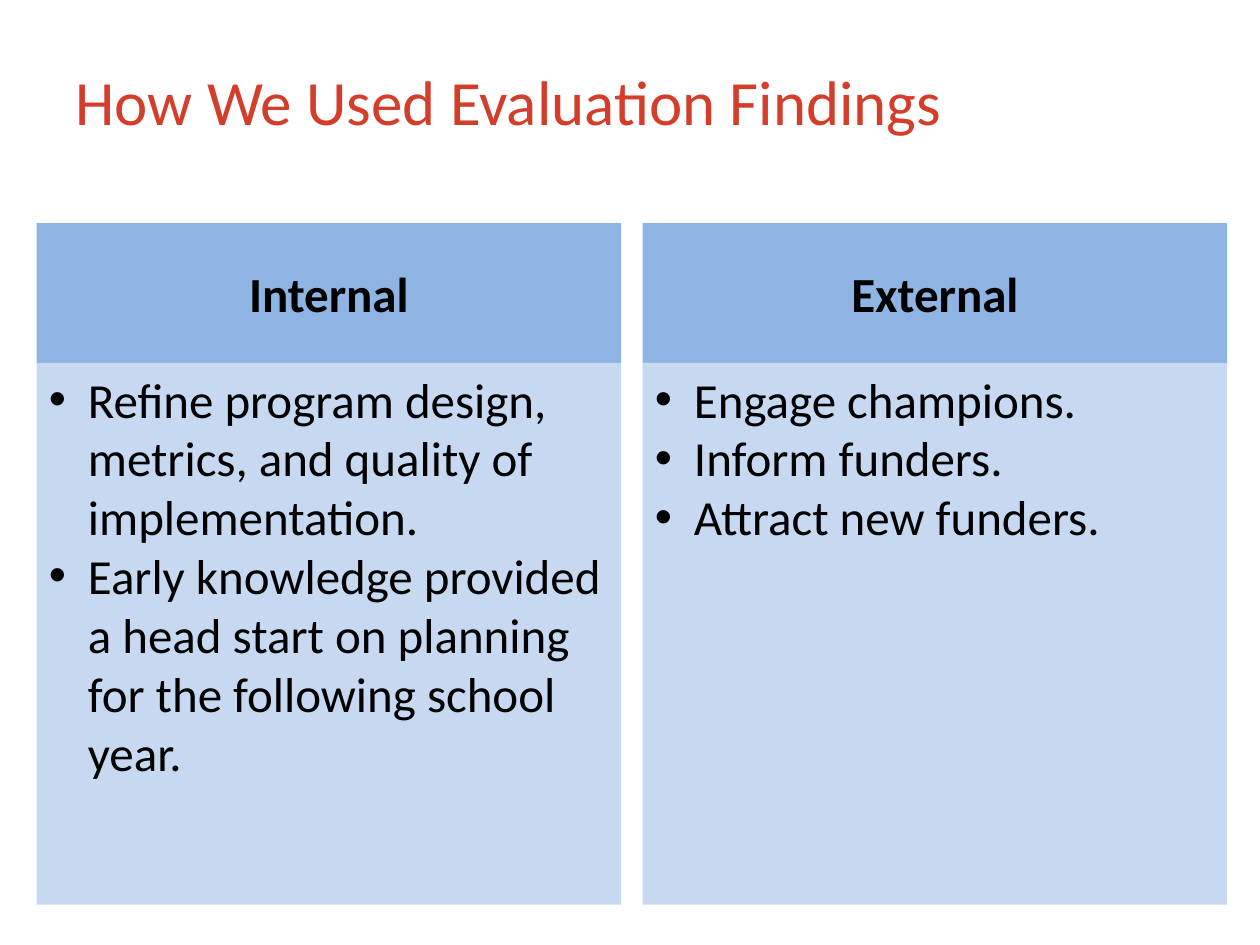
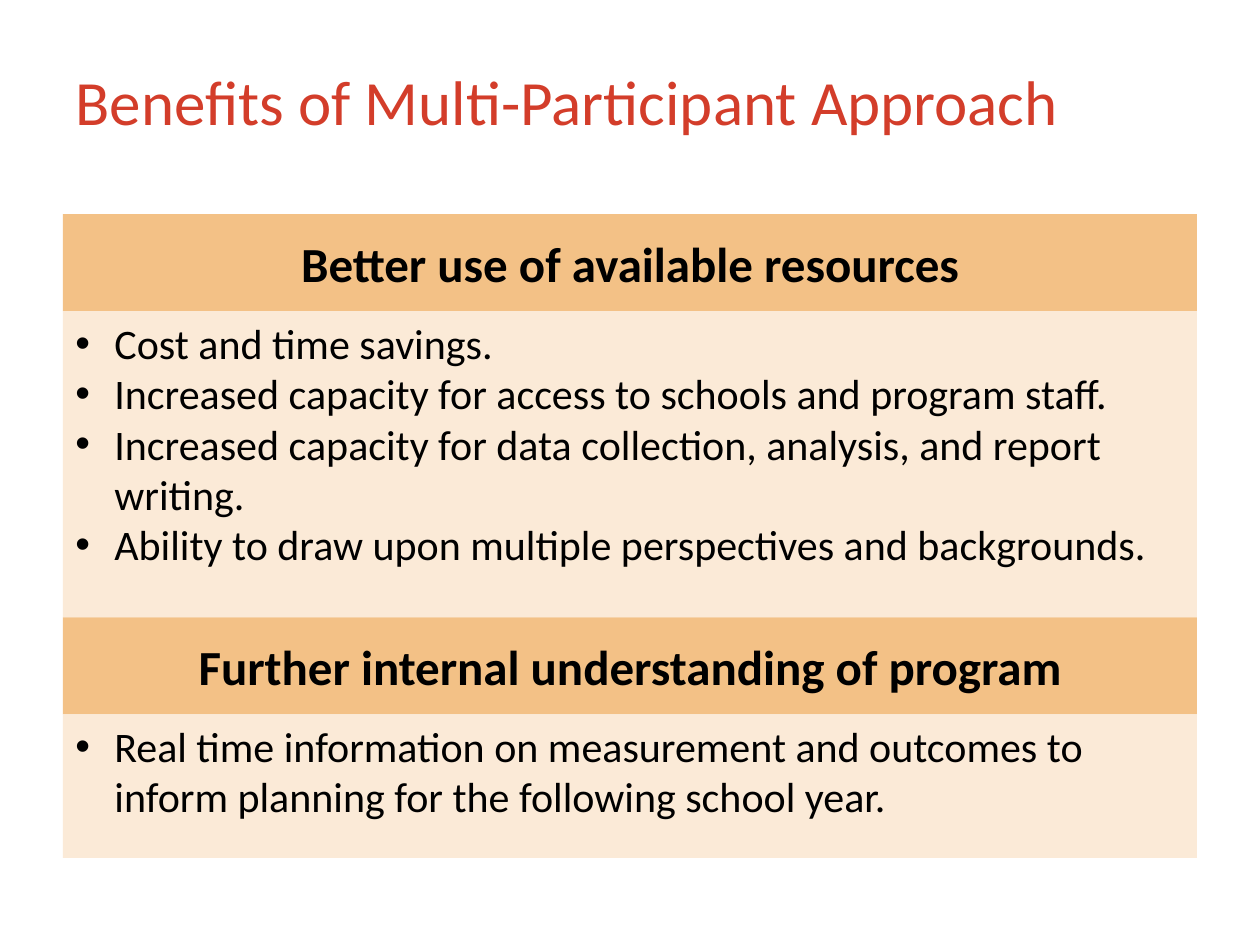
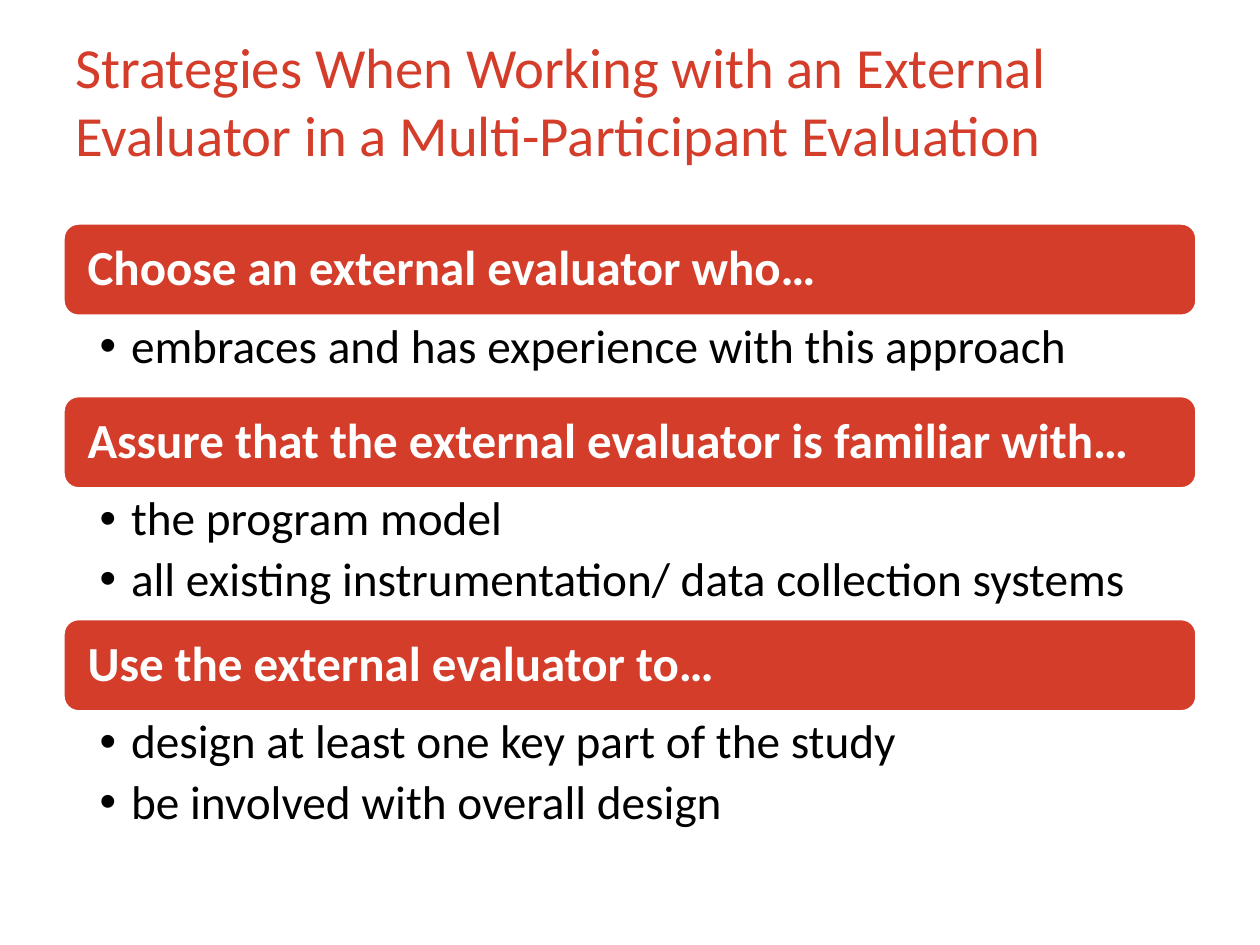
from pptx import Presentation
from pptx.dml.color import RGBColor
from pptx.enum.shapes import MSO_SHAPE as Preset
from pptx.enum.text import MSO_ANCHOR as Anchor, MSO_AUTO_SIZE as AutoSize, PP_ALIGN as Align
from pptx.oxml.ns import qn
from pptx.util import Inches, Pt
from lxml.etree import SubElement

RED = RGBColor(0xD3, 0x3D, 0x2A)
BLACK = RGBColor(0, 0, 0)
WHITE = RGBColor(0xFF, 0xFF, 0xFF)
BLUE = RGBColor(0x8E, 0xB4, 0xE3)
PALE_BLUE = RGBColor(0xC6, 0xD9, 0xF1)
ORANGE = RGBColor(0xF3, 0xC1, 0x86)
PALE_ORANGE = RGBColor(0xFB, 0xEA, 0xD7)

MARGIN, CONTENT_WIDTH = 0.5, 9
CENTERED = {"alignment": Align.CENTER}
LEFT = {"alignment": Align.LEFT}
TIGHT = {"alignment": Align.LEFT, "line_spacing": 0.9}
SPACED = {**TIGHT, "level": 1, "space_after": Pt(5.4)}
BANNER_FRAME = {"vertical_anchor": Anchor.MIDDLE, "margin_left": Inches(0.16), "margin_right": Inches(0.16)}
POINTS_FRAME = {"margin_left": Inches(0.29), "margin_right": Inches(0.27)}


def apply(target, values):
    for name, value in values.items():
        setattr(target, name, value)


class Deck:
    font_name = "Calibri"

    def __init__(self):
        self.presentation = Presentation()
        self.presentation.slide_width = Inches(10)
        self.presentation.slide_height = Inches(7.5)
        self.slide = None

    def fill_text(self, shape, lines, size, color=BLACK, bold=False, indent=0, frame_format=None, line_format=LEFT):
        frame = shape.text_frame
        apply(frame, {"word_wrap": True, "auto_size": AutoSize.NONE, "vertical_anchor": Anchor.TOP})
        apply(frame, frame_format or {})
        for index, line in enumerate(lines):
            paragraph = frame.add_paragraph() if index else frame.paragraphs[0]
            if indent:
                self.bullet(paragraph, indent)
            apply(paragraph, line_format)
            run = paragraph.add_run()
            run.text = line
            apply(run.font, {"name": self.font_name, "size": Pt(size), "bold": bold})
            run.font.color.rgb = color

    def bullet(self, paragraph, indent):
        properties = paragraph._p.get_or_add_pPr()
        properties.set("marL", str(Inches(indent)))
        properties.set("indent", str(-Inches(indent)))
        SubElement(properties, qn("a:buFont")).set("typeface", "Arial")
        SubElement(properties, qn("a:buChar")).set("char", "•")

    def titled_slide(self, title, size=36):
        self.slide = self.presentation.slides.add_slide(self.presentation.slide_layouts[5])
        heading = self.slide.shapes.title
        apply(heading, {"left": Inches(MARGIN), "top": Inches(0.3),
                        "width": Inches(CONTENT_WIDTH), "height": Inches(0.99)})
        self.fill_text(heading, [title], size, RED, frame_format={"vertical_anchor": Anchor.MIDDLE})

    def block(self, box, fill, preset=Preset.RECTANGLE):
        shape = self.slide.shapes.add_shape(preset, *map(Inches, box))
        shape.shadow.inherit = False
        shape.fill.solid()
        shape.fill.fore_color.rgb = fill
        shape.line.fill.background()
        return shape

    def panel(self, left, top, width, heading_height, points_height, heading, points, fills, size):
        heading_fill, points_fill = fills
        self.fill_text(self.block((left, top, width, heading_height), heading_fill), [heading], 28, bold=True,
                       frame_format={"vertical_anchor": Anchor.MIDDLE}, line_format=CENTERED)
        self.fill_text(self.block((left, top + heading_height, width, points_height), points_fill),
                       points, size, indent=0.31)

    def banner(self, top, height, heading):
        shape = self.block((MARGIN, top, CONTENT_WIDTH, height), RED, Preset.ROUNDED_RECTANGLE)
        shape.line.color.rgb = WHITE
        shape.line.width = Pt(2)
        self.fill_text(shape, [heading], 28, WHITE, True, frame_format=BANNER_FRAME, line_format=TIGHT)

    def point_list(self, top, height, points):
        area = self.slide.shapes.add_textbox(*map(Inches, (MARGIN, top, CONTENT_WIDTH, height)))
        self.fill_text(area, points, 27, indent=0.25, frame_format=POINTS_FRAME, line_format=SPACED)


def findings_slide(deck):
    deck.titled_slide("How We Used Evaluation Findings")
    uses = [
        ("Internal", ["Refine program design, metrics, and quality of implementation.",
                      "Early knowledge provided a head start on planning for the following school year."]),
        ("External", ["Engage champions.", "Inform funders.", "Attract new funders."]),
    ]
    for column, (audience, points) in enumerate(uses):
        deck.panel(0.29 + column * 4.81, 1.77, 4.64, 1.11, 4.3, audience, points, (BLUE, PALE_BLUE), 28)


def benefits_slide(deck):
    deck.titled_slide("Benefits of Multi-Participant Approach")
    benefits = [
        ("Better use of available resources", 2.43,
         ["Cost and time savings.",
          "Increased capacity for access to schools and program staff.",
          "Increased capacity for data collection, analysis, and report writing.",
          "Ability to draw upon multiple perspectives and backgrounds."]),
        ("Further internal understanding of program", 1.14,
         ["Real time information on measurement and outcomes to inform planning for the following school year."]),
    ]
    top, heading_height = 1.7, 0.77
    for benefit, points_height, points in benefits:
        deck.panel(MARGIN, top, CONTENT_WIDTH, heading_height, points_height, benefit, points,
                   (ORANGE, PALE_ORANGE), 24)
        top += heading_height + points_height


def strategies_slide(deck):
    deck.titled_slide("Strategies When Working with an External Evaluator in a Multi-Participant Evaluation", 32.4)
    strategies = [
        ("Choose an external evaluator who…", 0.63, ["embraces and has experience with this approach"]),
        ("Assure that the external evaluator is familiar with…", 1.03,
         ["the program model", "all existing instrumentation/ data collection systems"]),
        ("Use the external evaluator to…", 1.03,
         ["design at least one key part of the study", "be involved with overall design"]),
    ]
    top, banner_height = 1.77, 0.74
    for strategy, points_height, points in strategies:
        deck.banner(top, banner_height, strategy)
        deck.point_list(top + banner_height, points_height, points)
        top += banner_height + points_height


def main():
    deck = Deck()
    findings_slide(deck)
    benefits_slide(deck)
    strategies_slide(deck)
    deck.presentation.save("out.pptx")


if __name__ == "__main__":
    main()
